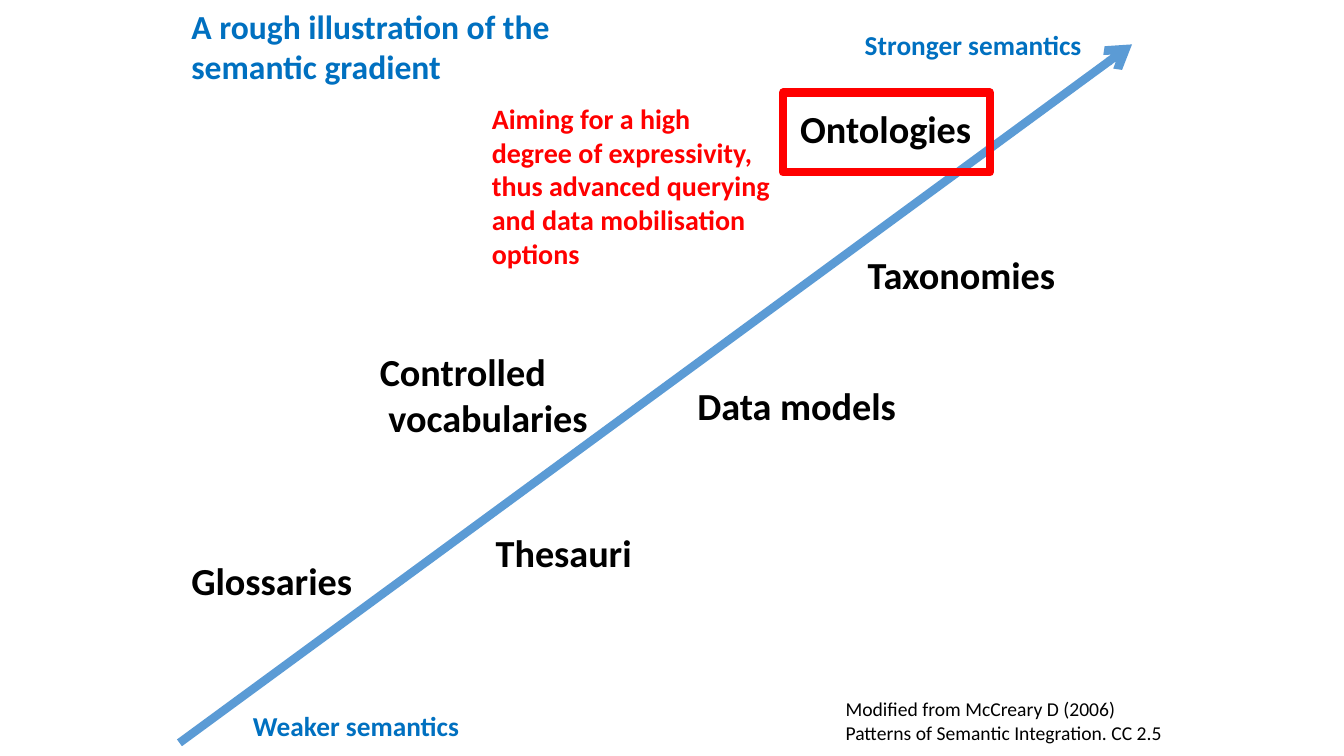
from lxml import etree
from pptx import Presentation
from pptx import util as u
from pptx.dml.color import RGBColor
from pptx.enum import shapes, text
from pptx.oxml.ns import qn

BLACK, BLUE, RED, ARROW_BLUE = "000000", "0070C0", "FF0000", "5B9BD5"


def color(hex_code):
    return RGBColor.from_string(hex_code)


def add_text(content, left, top, width, height, size=27.3, hex_code=BLACK, bold=True,
             anchor=text.MSO_ANCHOR.MIDDLE, wrap=True, line_spacing=None):
    """Place a text box; a newline starts a paragraph, a vertical tab breaks a line."""
    box = slide.shapes.add_textbox(u.Pt(left), u.Pt(top), u.Pt(width), u.Pt(height))
    frame = box.text_frame
    frame.word_wrap = wrap
    frame.vertical_anchor = anchor
    frame.text = content
    for paragraph in frame.paragraphs:
        paragraph.line_spacing = line_spacing
        for run in paragraph.runs:
            run.font.name = "Calibri"
            run.font.size = u.Pt(size)
            run.font.bold = bold
            run.font.color.rgb = color(hex_code)


prs = Presentation()
prs.slide_width, prs.slide_height = u.Pt(960), u.Pt(540)
slide = prs.slides.add_slide(prs.slide_layouts[6])

# Gradient arrow from weak to strong semantics
gradient = slide.shapes.add_connector(
    shapes.MSO_CONNECTOR.STRAIGHT, u.Pt(128.2), u.Pt(530.6), u.Pt(808.6), u.Pt(31.7))
gradient.line.color.rgb = color(ARROW_BLUE)
gradient.line.width = u.Pt(6)
etree.SubElement(gradient.line._get_or_add_ln(), qn("a:tailEnd"), type="arrow")
etree.SubElement(gradient._element.spPr, qn("a:effectLst"))

# Kinds of semantic resource along the arrow
add_text("Ontologies", 564.5, 71.3, 215.3, 45.4, line_spacing=0.9)
for resource, left, top, width, height in [
    ("Thesauri", 347, 371.5, 170, 45.4),
    ("Glossaries", 129.6, 391.7, 170, 45.4),
    ("Controlled\n vocabularies", 264.2, 244.8, 368.6, 73.4),
    ("Taxonomies", 612.7, 173.5, 170, 45.4),
    ("Data models", 491, 252.7, 368.6, 73.4),
]:
    add_text(resource, left, top, width, height)

# Heading and the two ends of the scale
add_text("A rough illustration of the semantic gradient", 129.6, 10.1, 340, 45.4,
         size=24, hex_code=BLUE)
for scale_end, left, top in [("Weaker semantics", 173.5, 495.4),
                             ("Stronger semantics", 610.6, 9.4)]:
    add_text(scale_end, left, top, 345.6, 45.4, size=19.5, hex_code=BLUE)

add_text("Modified from McCreary D (2006)\nPatterns of Semantic Integration. CC 2.5",
         596.9, 494.6, 243.4, 58.3, size=14, bold=False,
         anchor=text.MSO_ANCHOR.TOP, wrap=False)

# Highlighted goal
goal_frame = slide.shapes.add_shape(
    shapes.MSO_SHAPE.RECTANGLE, u.Pt(559.4), u.Pt(66.2), u.Pt(147.6), u.Pt(56.9))
goal_frame.shadow.inherit = False
goal_frame.fill.background()
goal_frame.line.color.rgb = color(RED)
goal_frame.line.width = u.Pt(6)
add_text("Aiming for a high\ndegree of expressivity,\vthus advanced querying\v"
         "and data mobilisation options",
         344.2, 69.1, 251.3, 128.2, size=20, hex_code=RED, anchor=text.MSO_ANCHOR.TOP)

prs.save("out.pptx")
